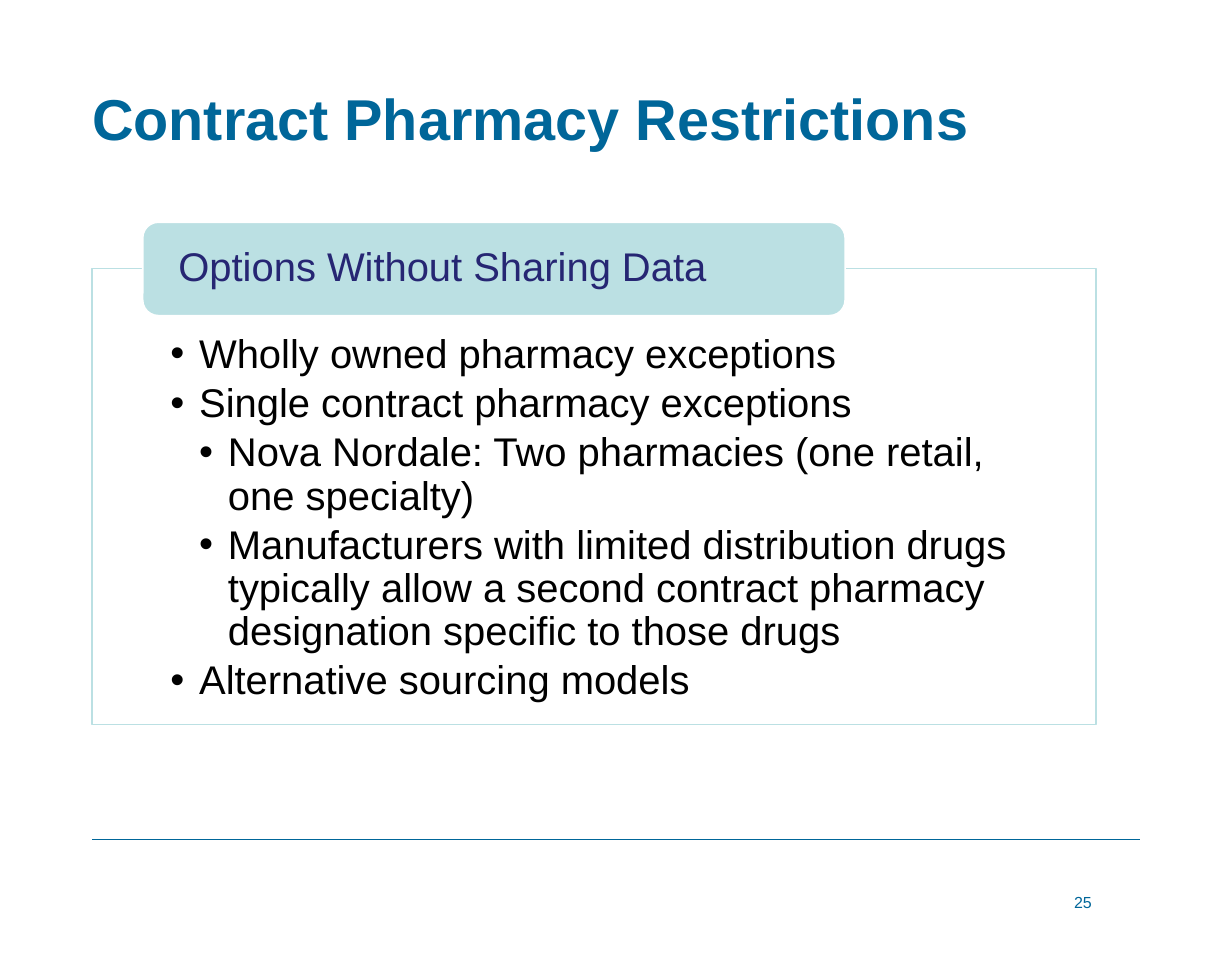
import pptx
import pptx.dml.color
import pptx.enum.shapes
import pptx.enum.text
import pptx.oxml.ns
import pptx.util
from lxml import etree

PX = 9144
BLUE, AQUA, NAVY, BLACK, WHITE = "006699", "BBE0E3", "262673", "000000", "FFFFFF"
ANCHOR = pptx.enum.text.MSO_ANCHOR
ALIGN = pptx.enum.text.PP_ALIGN
SHAPE = pptx.enum.shapes.MSO_SHAPE
INDENT = 25

OPTIONS = [
    (1, "Wholly owned pharmacy exceptions"),
    (1, "Single contract pharmacy exceptions"),
    (2, "Nova Nordale: Two pharmacies (one retail, one specialty)"),
    (2, "Manufacturers with limited distribution drugs typically allow a second "
        "contract pharmacy designation specific to those drugs"),
    (1, "Alternative sourcing models"),
]


def px(length):
    return pptx.util.Emu(length * PX)


def color(value):
    return pptx.dml.color.RGBColor.from_string(value)


def prepare_frame(shape, insets, anchor):
    frame = shape.text_frame
    frame.word_wrap = True
    frame.vertical_anchor = anchor
    (frame.margin_left, frame.margin_top,
     frame.margin_right, frame.margin_bottom) = map(px, insets)
    return frame


def write(paragraph, text, size, ink, bold=False, align=ALIGN.LEFT, spacing=None):
    paragraph.text = text
    paragraph.alignment = align
    paragraph.line_spacing = spacing
    font = paragraph.font
    font.name = "Arial"
    font.size = pptx.util.Pt(size)
    font.bold = bold
    font.color.rgb = color(ink)


def add_label(slide, box, insets, anchor, text, size, ink, **style):
    label = slide.shapes.add_textbox(*map(px, box))
    frame = prepare_frame(label, insets, anchor)
    write(frame.paragraphs[0], text, size, ink, **style)


def add_panel(slide, kind, box, fill, outline):
    panel = slide.shapes.add_shape(kind, *map(px, box))
    panel.shadow.inherit = False
    panel.fill.solid()
    panel.fill.fore_color.rgb = color(fill)
    panel.line.color.rgb = color(outline)
    panel.line.width = pptx.util.Pt(1)
    return panel


def add_rule(slide, left, right, y):
    rule = slide.shapes.add_connector(
        pptx.enum.shapes.MSO_CONNECTOR.STRAIGHT, px(left), px(y), px(right), px(y))
    rule.line.color.rgb = color(BLUE)
    rule.line.width = pptx.util.Pt(1)
    etree.SubElement(rule._element.spPr, pptx.oxml.ns.qn("a:effectLst"))


def add_bullet(paragraph, level):
    paragraph.level = level
    properties = paragraph._p.get_or_add_pPr()
    properties.set("marL", str(px(INDENT * level)))
    properties.set("indent", str(px(-INDENT)))
    etree.SubElement(properties, pptx.oxml.ns.qn("a:buFont"), typeface="Arial")
    etree.SubElement(properties, pptx.oxml.ns.qn("a:buChar"), char="•")


def fill_options(panel):
    frame = prepare_frame(panel, (68, 57, 68, 19), ANCHOR.TOP)
    for index, (level, text) in enumerate(OPTIONS):
        option = frame.add_paragraph() if index else frame.paragraphs[0]
        add_bullet(option, level)
        write(option, text, 25, BLACK, spacing=0.9)
        option.space_after = pptx.util.Pt(3.75)


def main():
    deck = pptx.Presentation()
    deck.slide_width, deck.slide_height = px(1070), px(830)
    slide = deck.slides.add_slide(deck.slide_layouts[6])

    add_rule(slide, 80, 990, 729)
    add_label(slide, (80, 0, 910, 148), (0, 0, 0, 16), ANCHOR.BOTTOM,
              "Contract Pharmacy Restrictions", 36, BLUE, bold=True,
              spacing=pptx.util.Pt(38.9))
    add_label(slide, (829, 770, 223, 44), (11, 5, 11, 5), ANCHOR.TOP,
              "25", 10, BLUE, align=ALIGN.CENTER)

    fill_options(add_panel(slide, SHAPE.RECTANGLE, (80, 233, 872, 396), WHITE, AQUA))
    heading = add_panel(slide, SHAPE.ROUNDED_RECTANGLE, (124, 193, 610, 81), AQUA, WHITE)
    frame = prepare_frame(heading, (27, 0, 27, 0), ANCHOR.MIDDLE)
    write(frame.paragraphs[0], "Options Without Sharing Data", 25, NAVY, spacing=0.9)

    deck.save("out.pptx")


if __name__ == "__main__":
    main()
